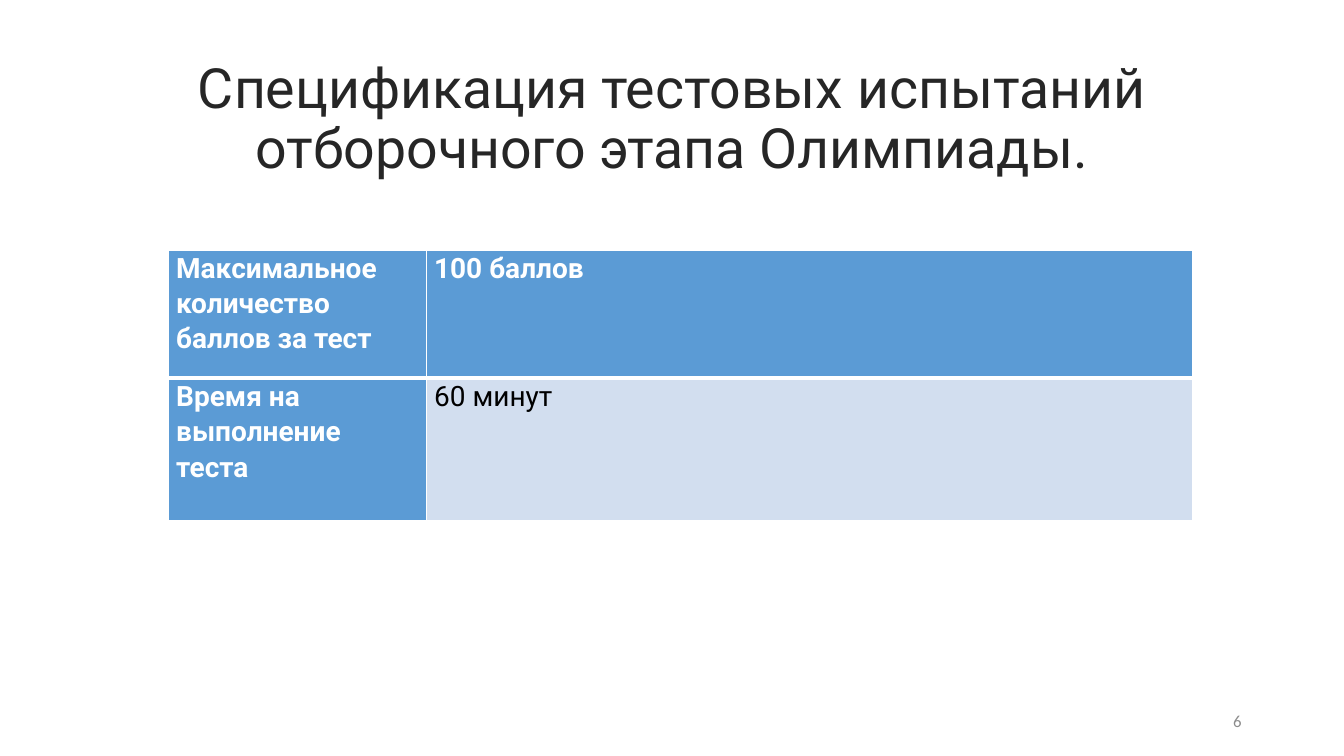
from lxml.etree import SubElement
from pptx import Presentation
from pptx.dml.color import RGBColor
from pptx.enum.text import MSO_ANCHOR, MSO_AUTO_SIZE, PP_ALIGN
from pptx.oxml.ns import qn
from pptx.util import Cm, Pt

WHITE, BLUE, PALE_BLUE = "FFFFFF", "5B9BD5", "D2DEEF"
COLUMN_WIDTHS = (6.5, 19.3)
ROW_HEIGHTS = (3.23, 3.58)
TEST_RULES = (
    ("Максимальное количество баллов за тест", "100 баллов"),
    ("Время на выполнение теста", "60 минут"),
)


def color(value):
    return RGBColor.from_string(value)


def add_span(para, text, size, font, shade, bold=False):
    span = para.add_run()
    span.text = text
    span.font.size = Pt(size)
    span.font.name = font
    span.font.bold = bold
    span.font.color.rgb = color(shade)


def place(box, left, top, width, height):
    box.left, box.top, box.width, box.height = Cm(left), Cm(top), Cm(width), Cm(height)


def fill_title(page, left, top, width, height):
    title = page.shapes.title
    place(title, left, top, width, height)
    frame = title.text_frame
    frame.word_wrap = True
    frame.auto_size = MSO_AUTO_SIZE.NONE
    frame.vertical_anchor = MSO_ANCHOR.MIDDLE
    frame.margin_bottom = Cm(1.65)
    para = frame.paragraphs[0]
    para.alignment = PP_ALIGN.CENTER
    para.line_spacing = 0.9
    add_span(para, "Спецификация тестовых испытаний отборочного этапа Олимпиады.",
             39.6, "Roboto", "262626")


def add_borders(cell, widths):
    """Draw white borders; widths maps each side tag to points, in schema order."""
    properties = cell._tc.get_or_add_tcPr()
    for side, width in widths.items():
        line = SubElement(properties, qn(f"a:{side}"), w=str(Pt(width)))
        fill = SubElement(line, qn("a:solidFill"))
        SubElement(fill, qn("a:srgbClr"), val=WHITE)


def fill_cell(cell, text, emphasized, top_border, bottom_border):
    add_borders(cell, {"lnL": 1, "lnR": 1, "lnT": top_border, "lnB": bottom_border})
    cell.fill.solid()
    cell.fill.fore_color.rgb = color(BLUE if emphasized else PALE_BLUE)
    cell.margin_left = cell.margin_right = Cm(0.19)
    cell.margin_top = cell.margin_bottom = Cm(0)
    para = cell.text_frame.paragraphs[0]
    para.line_spacing = 1.07
    add_span(para, text, 20, "Roboto", WHITE if emphasized else "000000", emphasized)


def add_rules_table(page, left, top):
    frame = page.shapes.add_table(
        len(ROW_HEIGHTS), len(COLUMN_WIDTHS), Cm(left), Cm(top),
        Cm(sum(COLUMN_WIDTHS)), Cm(sum(ROW_HEIGHTS)))
    table = frame.table
    table.first_col = True
    for column, width in zip(table.columns, COLUMN_WIDTHS):
        column.width = Cm(width)
    for row_index, (row, height) in enumerate(zip(table.rows, ROW_HEIGHTS)):
        row.height = Cm(height)
        is_header = row_index == 0
        for column_index, text in enumerate(TEST_RULES[row_index]):
            fill_cell(table.cell(row_index, column_index), text,
                      emphasized=is_header or column_index == 0,
                      top_border=1 if is_header else 3,
                      bottom_border=3 if is_header else 1)


def add_page_number(page, left, top, width, height):
    box = page.shapes.add_textbox(Cm(left), Cm(top), Cm(width), Cm(height))
    frame = box.text_frame
    frame.word_wrap = True
    frame.vertical_anchor = MSO_ANCHOR.MIDDLE
    para = frame.paragraphs[0]
    para.alignment = PP_ALIGN.RIGHT
    add_span(para, "6", 12, "Calibri", "8C8C8C")


def main():
    deck = Presentation()
    deck.slide_width, deck.slide_height = Cm(33.87), Cm(19.05)
    page = deck.slides.add_slide(deck.slide_layouts[5])
    fill_title(page, 2.33, 1.95, 29.21, 3.68)
    add_rules_table(page, 4.25, 6.3)
    add_page_number(page, 23.92, 17.66, 7.62, 1.01)
    deck.save("out.pptx")


if __name__ == "__main__":
    main()
